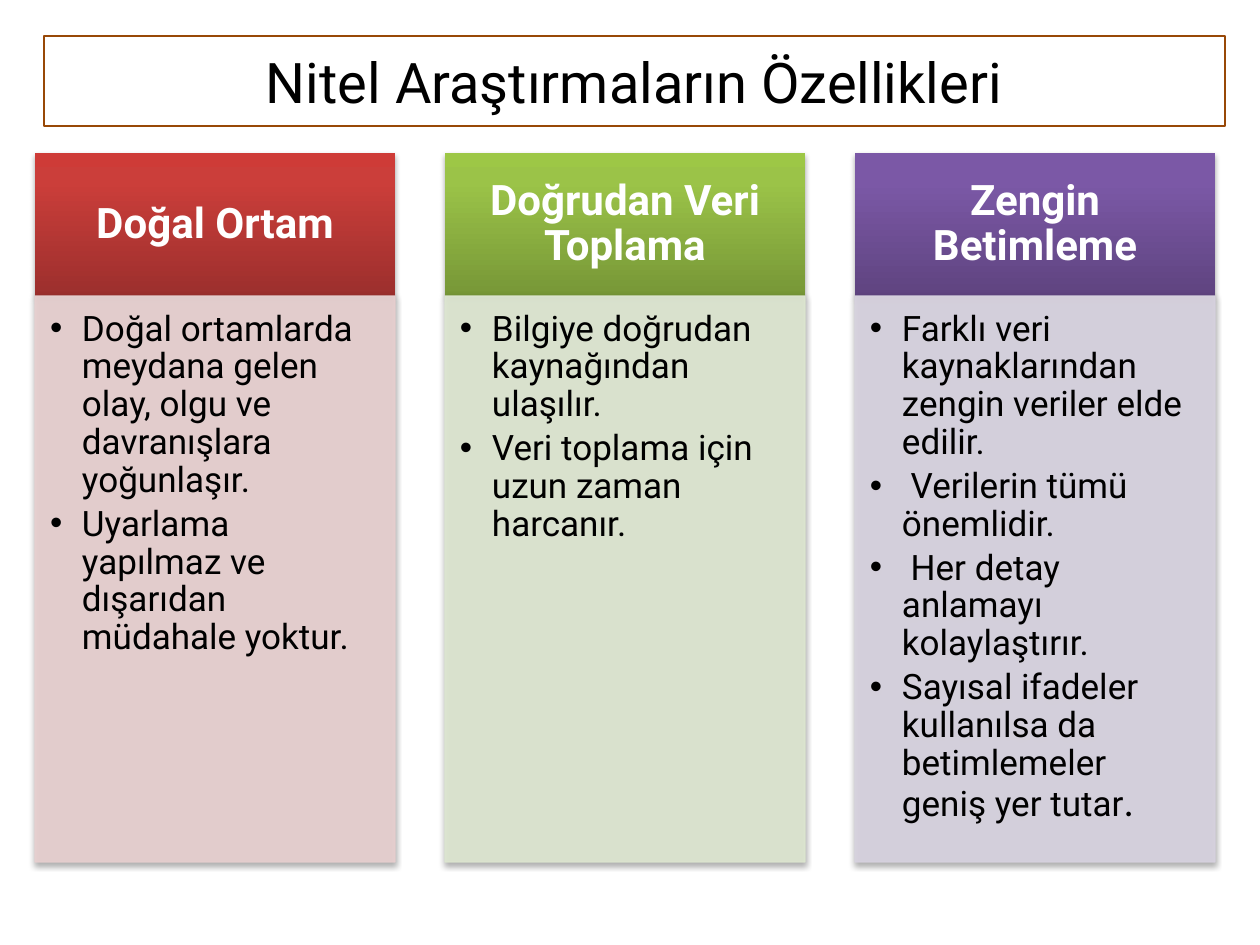
from copy import deepcopy
from dataclasses import dataclass

from lxml import etree
from pptx import Presentation
from pptx import util as u
from pptx.dml.color import RGBColor
from pptx.enum import shapes, text
from pptx.oxml import ns

SCALE = 914400 / 126  # EMU per px


def px(n: int) -> u.Emu:
    return u.Emu(round(n * SCALE))


@dataclass(frozen=True)
class Theme:
    font: str = "Roboto"
    stop_font: str = "Calibri"
    ink: str = "000000"
    light: str = "FFFFFF"
    title_line: str = "984807"
    title_size: int = 32
    header_size: int = 24
    body_size: int = 20
    stop_size: int = 22
    line_width: float = 0.75
    spacing: float = 0.9


@dataclass(frozen=True)
class Box:
    left: int
    top: int
    width: int
    height: int


@dataclass(frozen=True)
class Column:
    heading: str
    gradient: tuple[str, str, str]  # bottom to top
    tint: str
    points: tuple[str, ...]


THEME = Theme()
TITLE = Box(44, 36, 1181, 90)
LEFT, PITCH, WIDTH = 35, 410, 360
HEADER_TOP, HEADER_H, BODY_H = 153, 143, 566
STOPS = (0, 0.8, 1)
HEADER_INSETS = (24, 14, 24, 14)
BODY_INSETS = (15, 15, 20, 21)
INDENT = 32

COLUMNS = (
    Column("Doğal Ortam", ("9C2F2D", "CB3E3A", "CE3B37"), "E8D0D0", (
        "Doğal ortamlarda meydana gelen olay, olgu ve davranışlara yoğunlaşır.",
        "Uyarlama yapılmaz ve dışarıdan müdahale yoktur.",
    )),
    Column("Doğrudan Veri Toplama", ("779737", "9BC348", "9DC746"), "DEE7D1", (
        "Bilgiye doğrudan kaynağından ulaşılır.",
        "Veri toplama için uzun zaman harcanır.",
    )),
    Column("Zengin Betimleme", ("5F4480", "7B58A6", "7C57A8"), "D8D3E0", (
        "Farklı veri kaynaklarından zengin veriler elde edilir.",
        " Verilerin tümü önemlidir.",
        " Her detay anlamayı kolaylaştırır.",
        "Sayısal ifadeler kullanılsa da betimlemeler geniş yer tutar",
    )),
)


def sub(parent, tag: str, **attrs):
    return etree.SubElement(parent, ns.qn(tag), attrs)


def apply(obj, values: dict) -> None:
    for name, value in values.items():
        setattr(obj, name, value)


def add_run(p, words: str, size: int, color: str, font: str = THEME.font, bold: bool = False) -> None:
    r = p.add_run()
    r.text = words
    apply(r.font, {"name": font, "size": u.Pt(size), "bold": bold})
    r.font.color.rgb = RGBColor.from_string(color)


def add_panel(s, box: Box, insets: tuple[int, ...], anchor):
    """Add a rectangle with a soft shadow below it and set up its text frame."""
    sp = s.shapes.add_shape(shapes.MSO_SHAPE.RECTANGLE, px(box.left), px(box.top),
                            px(box.width), px(box.height))
    sp.shadow.inherit = False
    effects = sp._element.spPr.find(ns.qn("a:effectLst"))
    shadow = sub(effects, "a:outerShdw", blurRad="40000", dist="23000", dir="5400000", rotWithShape="0")
    sub(sub(shadow, "a:srgbClr", val="000000"), "a:alpha", val="35000")
    sides = ("margin_left", "margin_top", "margin_right", "margin_bottom")
    apply(sp.text_frame, dict(zip(sides, map(px, insets))))
    apply(sp.text_frame, {"word_wrap": True, "vertical_anchor": anchor})
    return sp


def add_header(s, box: Box, column: Column) -> None:
    sp = add_panel(s, box, HEADER_INSETS, text.MSO_ANCHOR.MIDDLE)
    sp.line.fill.background()
    sp.fill.gradient()
    sp.fill.gradient_angle = 90
    stop_list = sp._element.spPr.find(".//" + ns.qn("a:gsLst"))
    stop_list.append(deepcopy(stop_list[-1]))
    for stop, position, color in zip(sp.fill.gradient_stops, STOPS, column.gradient):
        stop.position = position
        stop.color.rgb = RGBColor.from_string(color)
    p = sp.text_frame.paragraphs[0]
    apply(p, {"alignment": text.PP_ALIGN.CENTER, "line_spacing": THEME.spacing})
    add_run(p, column.heading, THEME.header_size, THEME.light, bold=True)


def add_body(s, box: Box, column: Column):
    sp = add_panel(s, box, BODY_INSETS, text.MSO_ANCHOR.TOP)
    sp.fill.solid()
    sp.line.width = u.Pt(THEME.line_width)
    for color in (sp.fill.fore_color, sp.line.color):
        color.rgb = RGBColor.from_string(column.tint)
    for node in sp._element.spPr.findall(".//" + ns.qn("a:solidFill")):
        sub(node[0], "a:alpha", val="90000")
    tf = sp.text_frame
    for i, point in enumerate(column.points):
        p = tf.add_paragraph() if i else tf.paragraphs[0]
        pPr = p._p.get_or_add_pPr()
        pPr.set("marL", str(px(INDENT)))
        pPr.set("indent", str(-px(INDENT)))
        sub(pPr, "a:buFont", typeface="Arial")
        sub(pPr, "a:buChar", char="•")
        apply(p, {"alignment": text.PP_ALIGN.LEFT, "line_spacing": THEME.spacing,
                  "space_after": u.Pt(3.5)})
        add_run(p, point, THEME.body_size, THEME.ink)
    return sp


def format_title(title) -> None:
    apply(title, {"left": px(TITLE.left), "top": px(TITLE.top),
                  "width": px(TITLE.width), "height": px(TITLE.height)})
    title.line.color.rgb = RGBColor.from_string(THEME.title_line)
    title.line.width = u.Pt(THEME.line_width)
    apply(title.text_frame, {"auto_size": text.MSO_AUTO_SIZE.NONE, "word_wrap": True,
                             "vertical_anchor": text.MSO_ANCHOR.MIDDLE})
    p = title.text_frame.paragraphs[0]
    p.alignment = text.PP_ALIGN.CENTER
    add_run(p, "Nitel Araştırmaların Özellikleri", THEME.title_size, THEME.ink)


def main() -> None:
    prs = Presentation()
    apply(prs, {"slide_width": u.Inches(10), "slide_height": u.Inches(7.5)})
    s = prs.slides.add_slide(prs.slide_layouts[5])
    format_title(s.shapes.title)
    for i, column in enumerate(COLUMNS):
        left = LEFT + i * PITCH
        add_header(s, Box(left, HEADER_TOP, WIDTH, HEADER_H), column)
        body = add_body(s, Box(left, HEADER_TOP + HEADER_H, WIDTH, BODY_H), column)
    add_run(body.text_frame.paragraphs[-1], ".", THEME.stop_size, THEME.ink, THEME.stop_font)
    prs.save("out.pptx")


if __name__ == "__main__":
    main()
